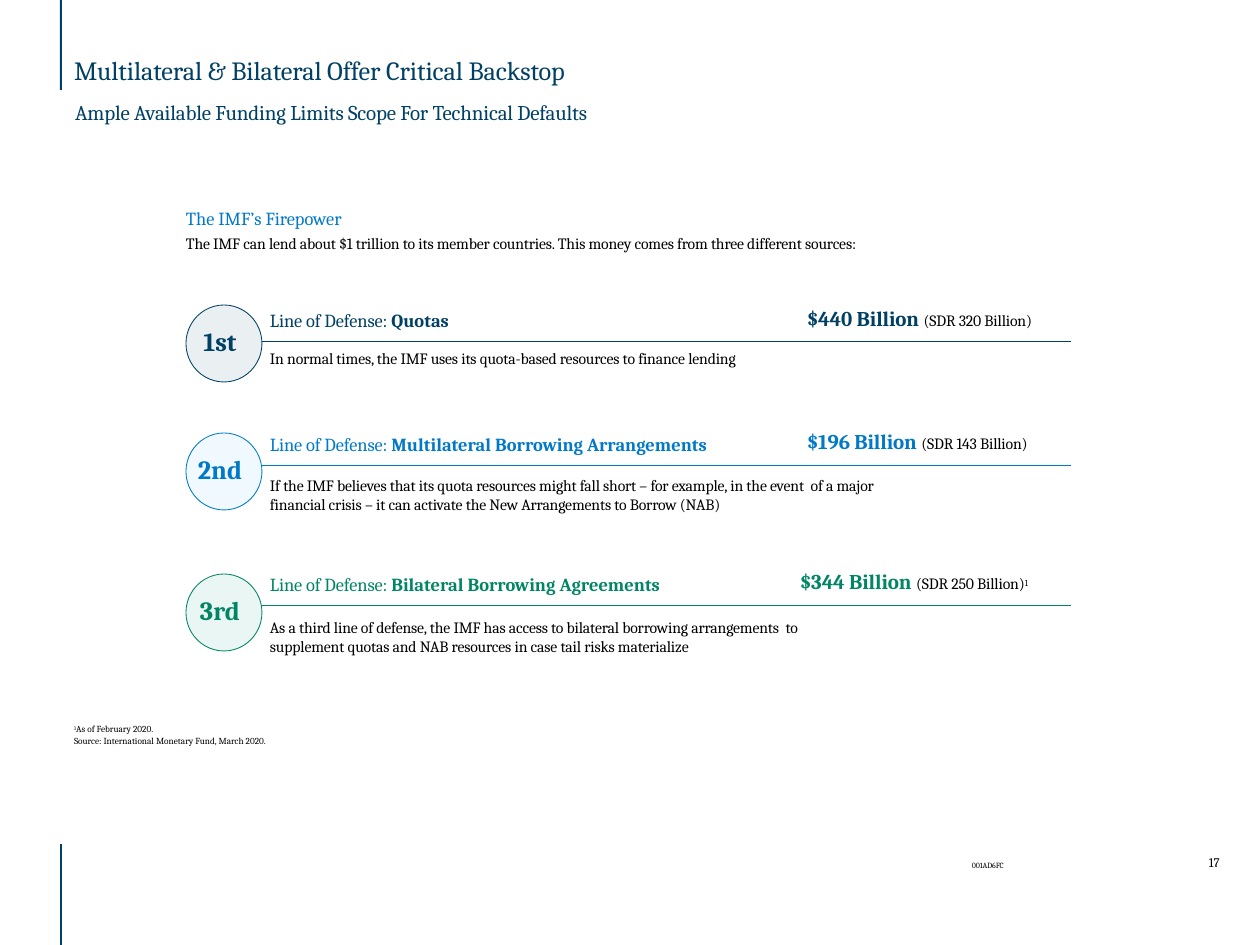
import dataclasses

import pptx
import pptx.dml.color
import pptx.enum.shapes
import pptx.enum.text
import pptx.oxml
import pptx.oxml.ns
import pptx.util

SHAPES = pptx.enum.shapes.MSO_SHAPE
ANCHORS = pptx.enum.text.MSO_ANCHOR
ALIGN = pptx.enum.text.PP_ALIGN


@dataclasses.dataclass(frozen=True)
class Theme:
    font: str = "Cambria"
    navy: str = "004064"
    blue: str = "0079C9"
    green: str = "008565"
    black: str = "000000"
    navy_tint: str = "EAF0F2"
    blue_tint: str = "EFF9FF"
    green_tint: str = "EAF6F3"
    title: float = 22.5
    subtitle: float = 18
    heading: float = 15.8
    body: float = 13.5
    page: float = 11.2
    note: float = 7.9
    code: float = 6.8
    hairline: float = 0.75


THEME = Theme()


def px(length):
    return pptx.util.Inches(length / 84)


def rgb(color):
    return pptx.dml.color.RGBColor.from_string(color)


def apply_format(target, values):
    for name, value in values.items():
        setattr(target, name, value)


def run(text, size, color, bold=False, baseline=0, spacing=-10):
    """Describe one run; spacing is in hundredths of a point."""
    return text, size, color, bold, baseline, spacing


def add_runs(paragraph, runs):
    for text, size, color, bold, baseline, spacing in runs:
        piece = paragraph.add_run()
        piece.text = text
        apply_format(piece.font, {
            "name": THEME.font, "size": pptx.util.Pt(size), "bold": bold})
        piece.font.color.rgb = rgb(color)
        # Letter spacing and superscript have no public property
        properties = piece._r.get_or_add_rPr()
        properties.set("spc", str(spacing))
        if baseline:
            properties.set("baseline", str(baseline))


def add_text(slide, box, paragraphs, frame_format=None, paragraph_format=None,
             gap=0):
    shape = slide.shapes.add_textbox(*map(px, box))
    frame = shape.text_frame
    apply_format(frame, {
        "word_wrap": True, "margin_left": 0, "margin_top": 0,
        "margin_right": 0, "margin_bottom": 0, **(frame_format or {})})
    for index, runs in enumerate(paragraphs):
        paragraph = frame.add_paragraph() if index else frame.paragraphs[0]
        apply_format(paragraph, paragraph_format or {})
        if index and gap:
            paragraph.space_before = pptx.util.Pt(gap)
        add_runs(paragraph, runs)


def add_line(slide, start, end, color, width):
    line = slide.shapes.add_connector(
        pptx.enum.shapes.MSO_CONNECTOR.STRAIGHT, *map(px, (*start, *end)))
    line.line.color.rgb = rgb(color)
    line.line.width = pptx.util.Pt(width)
    line._element.spPr.append(pptx.oxml.parse_xml(
        f"<a:effectLst {pptx.oxml.ns.nsdecls('a')}/>"))


def add_shape(slide, kind, box, fill, outline=None):
    shape = slide.shapes.add_shape(kind, *map(px, box))
    shape.shadow.inherit = False
    shape.fill.solid()
    shape.fill.fore_color.rgb = rgb(fill)
    if outline:
        shape.line.color.rgb = rgb(outline)
        shape.line.width = pptx.util.Pt(THEME.hairline)
    else:
        shape.line.fill.background()
    return shape


def add_badge(slide, top, label, color, tint):
    circle = add_shape(slide, SHAPES.OVAL, (186, top, 76, 77), tint, color)
    frame = circle.text_frame
    apply_format(frame, {
        "word_wrap": False, "vertical_anchor": ANCHORS.MIDDLE,
        "margin_left": 0, "margin_top": 0,
        "margin_right": px(8), "margin_bottom": px(5)})
    frame.paragraphs[0].alignment = ALIGN.CENTER
    add_runs(frame.paragraphs[0],
             [run(label, THEME.title, color, True, spacing=0)])


def add_defense_line(slide, rule, badge_top, label, color, tint, name,
                     amount_left, amount, rights, footnote, detail_box, detail):
    add_line(slide, (186, rule), (1071, rule), color, THEME.hairline)
    add_badge(slide, badge_top, label, color, tint)
    add_text(slide, (270, rule - 32, 498, 25), [[
        run("Line of Defense: ", THEME.heading, color),
        run(name, THEME.heading, color, True, spacing=0)]])
    amounts = [run(amount + " ", THEME.subtitle, color, True),
               run(rights, THEME.body, THEME.black)]
    if footnote:
        amounts.append(run(footnote, THEME.body, THEME.black, baseline=24000))
    add_text(slide, (amount_left, rule - 36, 264, 29), [amounts])
    detail_top, detail_width = detail_box
    add_text(slide, (270, detail_top, detail_width, 42),
             [[run(detail, THEME.body, THEME.black)]])


def add_header(slide):
    add_shape(slide, SHAPES.RECTANGLE, (60, 0, 2, 90), THEME.navy)
    add_text(slide, (74, 54, 1123, 42), [[run(
        "Multilateral & Bilateral Offer Critical Backstop",
        THEME.title, THEME.navy)]])
    add_text(slide, (75, 100, 1123, 42), [[run(
        "Ample Available Funding Limits Scope For Technical Defaults",
        THEME.subtitle, THEME.navy, spacing=-15)]])


def add_footer(slide):
    add_line(slide, (61, 844), (61, 945), THEME.navy, 1)
    add_text(slide, (74, 705, 1123, 42), [
        [run("1", THEME.note, THEME.black, baseline=28000, spacing=20),
         run("As of February 2020.", THEME.note, THEME.black, spacing=0)],
        [run("Source: International Monetary Fund, March 2020.",
             THEME.note, THEME.black, spacing=0)],
    ], {"vertical_anchor": ANCHORS.BOTTOM},
        {"line_spacing": 0.95, "space_after": pptx.util.Pt(1.5)})
    add_text(slide, (972, 861, 48, 11),
             [[run("001AD6FC", THEME.code, THEME.black)]])
    add_text(slide, (1209, 854, 18, 17),
             [[run("17", THEME.page, THEME.black)]])


def main():
    presentation = pptx.Presentation()
    presentation.slide_width = px(1260)
    presentation.slide_height = px(945)
    slide = presentation.slides.add_slide(presentation.slide_layouts[6])

    add_header(slide)

    # Introduction
    add_text(slide, (186, 207, 795, 53), [
        [run("The IMF’s Firepower", THEME.heading, THEME.blue, spacing=-5)],
        [run("The IMF can lend about $1 trillion to its member countries. "
             "This money comes from three different sources:",
             THEME.body, THEME.black)],
    ], gap=4)

    # Three lines of defense
    add_defense_line(
        slide, 341, 305, "1st", THEME.navy, THEME.navy_tint, "Quotas",
        807, "$440 Billion", "(SDR 320 Billion)", "", (349, 551),
        "In normal times, the IMF uses its quota-based resources to finance "
        "lending")
    add_defense_line(
        slide, 465, 433, "2nd", THEME.blue, THEME.blue_tint,
        "Multilateral Borrowing Arrangements",
        807, "$196 Billion", "(SDR 143 Billion)", "", (476, 630),
        "If the IMF believes that its quota resources might fall short – for "
        "example, in the event  of a major financial crisis – it can activate "
        "the New Arrangements to Borrow (NAB)")
    add_defense_line(
        slide, 605, 574, "3rd", THEME.green, THEME.green_tint,
        "Bilateral Borrowing Agreements",
        800, "$344 Billion", "(SDR 250 Billion)", "1", (618, 603),
        "As a third line of defense, the IMF has access to bilateral borrowing "
        "arrangements  to supplement quotas and NAB resources in case tail "
        "risks materialize")

    add_footer(slide)
    presentation.save("out.pptx")


if __name__ == "__main__":
    main()
